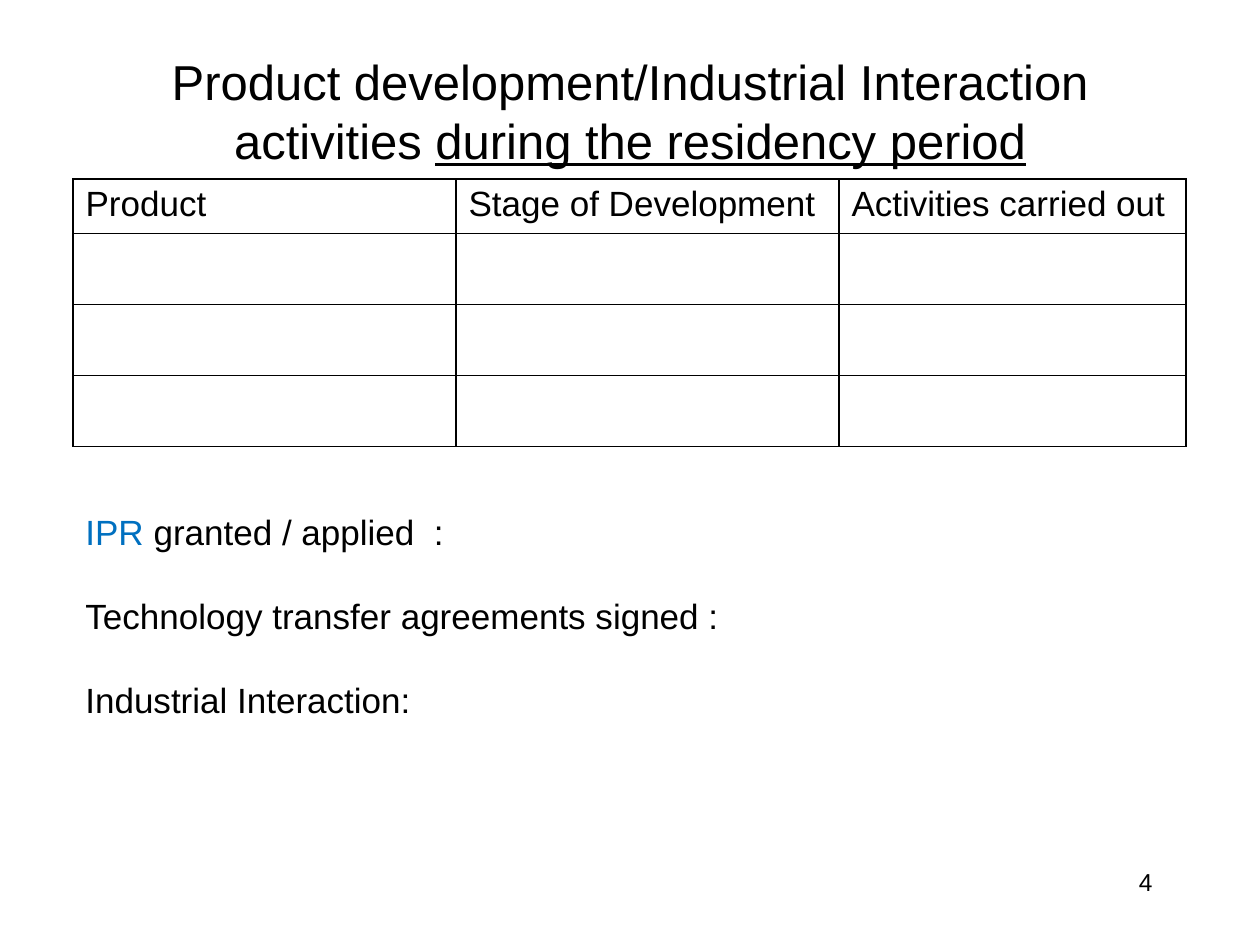
from dataclasses import dataclass

from lxml import etree
from pptx import Presentation
from pptx.dml.color import RGBColor
from pptx.enum import text
from pptx.oxml import ns
from pptx.util import Emu, Pt

SCALE = 914400 / 126  # EMU in one px


@dataclass(frozen=True)
class Theme:
    font: str = "Arial"
    ink: str = "000000"
    accent: str = "0070C0"
    title: int = 28
    body: int = 20
    number: int = 14
    gap: int = 24
    border: int = 1


THEME = Theme()


def px(length):
    return Emu(round(length * SCALE))


def style(para, size, align=text.PP_ALIGN.LEFT):
    para.alignment = align
    para.font.name = THEME.font
    para.font.size = Pt(size)
    para.font.color.rgb = RGBColor.from_string(THEME.ink)


def add_span(para, words):
    span = para.add_run()
    span.text = words
    return span


def add_frame(page, box, anchor=text.MSO_ANCHOR.TOP):
    frame = page.shapes.add_textbox(*map(px, box)).text_frame
    frame.word_wrap = True
    frame.vertical_anchor = anchor
    return frame


def add_title(page, box):
    para = add_frame(page, box, text.MSO_ANCHOR.MIDDLE).paragraphs[0]
    style(para, THEME.title, text.PP_ALIGN.CENTER)
    add_span(para, "Product development/Industrial Interaction activities ")
    add_span(para, "during the residency period").font.underline = True


def add_page_number(page, box):
    para = add_frame(page, box).paragraphs[0]
    style(para, THEME.number, text.PP_ALIGN.RIGHT)
    add_span(para, "4")


def add_borders(cell):
    properties = cell._tc.get_or_add_tcPr()
    for index, side in enumerate(("lnL", "lnR", "lnT", "lnB")):
        line = etree.Element(ns.qn(f"a:{side}"), w=str(Pt(THEME.border)))
        fill = etree.SubElement(line, ns.qn("a:solidFill"))
        etree.SubElement(fill, ns.qn("a:srgbClr"), val=THEME.ink)
        properties.insert(index, line)


def add_product_table(page, box, headings, widths, heights):
    table = page.shapes.add_table(len(heights), len(widths), *map(px, box)).table
    table.first_row = table.horz_banding = False
    for column, width in zip(table.columns, widths):
        column.width = px(width)
    for row, height in zip(table.rows, heights):
        row.height = px(height)
    for cell in table.iter_cells():
        cell.fill.background()
        add_borders(cell)
        style(cell.text_frame.paragraphs[0], THEME.body)
    for column, heading in enumerate(headings):
        add_span(table.cell(0, column).text_frame.paragraphs[0], heading)


def add_outcomes(page, box, lines):
    frame = add_frame(page, box)
    for index, (marked, plain) in enumerate(lines):
        para = frame.add_paragraph() if index else frame.paragraphs[0]
        style(para, THEME.body)
        if index:
            para.space_before = Pt(THEME.gap)
        if marked:
            span = add_span(para, marked)
            span.font.color.rgb = RGBColor.from_string(THEME.accent)
        add_span(para, plain)


def main():
    deck = Presentation()
    deck.slide_width, deck.slide_height = px(1260), px(945)
    page = deck.slides.add_slide(deck.slide_layouts[6])

    # Heading and page number
    add_title(page, (95, 32, 1070, 157))
    add_page_number(page, (903, 861, 262, 63))

    # Product table with empty rows to fill in
    add_product_table(
        page, (73, 179, 1113, 268),
        ("Product", "Stage of Development", "Activities carried out"),
        widths=(383, 383, 347), heights=(53, *[71] * 3))

    # Outcomes below the table
    add_outcomes(page, (73, 504, 1071, 224), (
        ("IPR", " granted / applied  :"),
        ("", "Technology transfer agreements signed :"),
        ("", "Industrial Interaction:")))

    deck.save("out.pptx")


if __name__ == "__main__":
    main()
